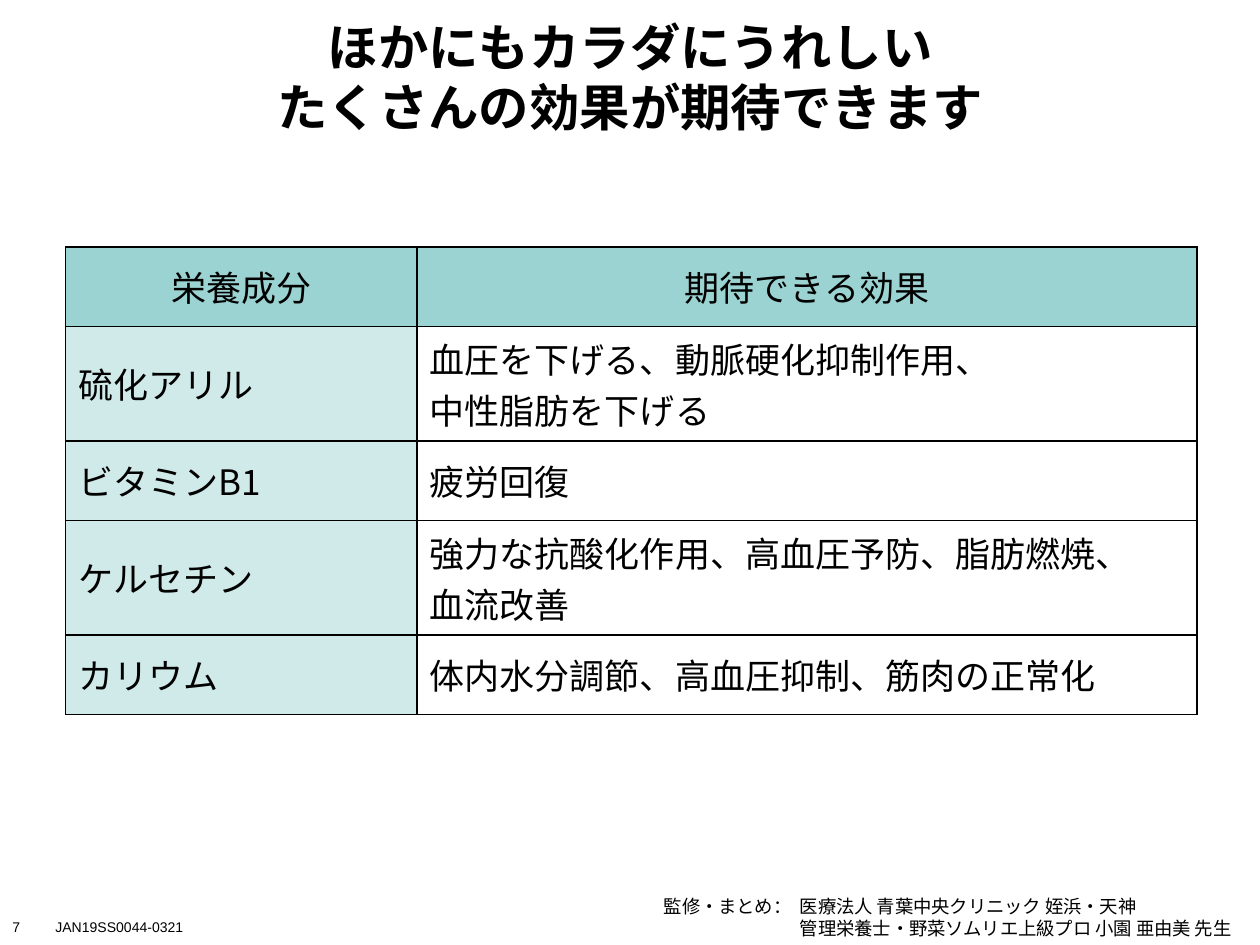
from lxml.etree import SubElement
from pptx import Presentation
from pptx.dml.color import RGBColor
from pptx.enum.text import MSO_ANCHOR as Anchor, MSO_AUTO_SIZE as AutoSize, PP_ALIGN as Align
from pptx.oxml.ns import qn
from pptx.util import Inches, Pt

COLORS = {"ink": "000000", "header": "9BD2D2", "label": "CFEAE9"}
JAPANESE = "Noto Sans CJK JP"
COLUMN_WIDTHS = (2.79, 6.19)
ONE_LINE, TWO_LINES = 0.63, 0.91
EFFECTS = (
    ("栄養成分", "期待できる効果"),
    ("硫化アリル", "血圧を下げる、動脈硬化抑制作用、\n中性脂肪を下げる"),
    ("ビタミンB1", "疲労回復"),
    ("ケルセチン", "強力な抗酸化作用、高血圧予防、脂肪燃焼、\n血流改善"),
    ("カリウム", "体内水分調節、高血圧抑制、筋肉の正常化"),
)
CREDITS = (
    "監修・まとめ：\t医療法人 青葉中央クリニック 姪浜・天神",
    "\t管理栄養士・野菜ソムリエ上級プロ 小園 亜由美 先生",
)


def color(name):
    return RGBColor.from_string(COLORS[name])


def write(para, text, size, face=JAPANESE, bold=False):
    """Add the text run by run, with a line break between its lines."""
    for index, line in enumerate(text.split("\n")):
        if index:
            para.add_line_break()
        span = para.add_run()
        span.text = line
        font = span.font
        font.name, font.size, font.bold = face, Pt(size), bold
        font.color.rgb = color("ink")
        SubElement(font._element, qn("a:ea"), typeface=face)


def place(shape, left, top, width, height):
    shape.left, shape.top = Inches(left), Inches(top)
    shape.width, shape.height = Inches(width), Inches(height)


def add_title(page, text):
    title = page.shapes.title
    place(title, 0.97, 0.02, 8.06, 1.07)
    frame = title.text_frame
    frame.auto_size = AutoSize.NONE
    frame.vertical_anchor = Anchor.MIDDLE
    frame.margin_top, frame.margin_bottom = Inches(0.14), Inches(0.04)
    para = frame.paragraphs[0]
    para.alignment = Align.CENTER
    write(para, text, 28.8, bold=True)


def add_small_text(page, text, left, width):
    box = page.shapes.add_textbox(Inches(left), Inches(7.24), Inches(width), Inches(0.24))
    box.text_frame.word_wrap = True
    write(box.text_frame.paragraphs[0], text, 8, "Arial")


def add_borders(cell):
    properties = cell._tc.get_or_add_tcPr()
    for side in ("lnL", "lnR", "lnT", "lnB"):
        line = SubElement(properties, qn(f"a:{side}"), w=str(Pt(1)))
        fill = SubElement(line, qn("a:solidFill"))
        SubElement(fill, qn("a:srgbClr"), val=COLORS["ink"])


def fill_cell(cell, name):
    if name:
        cell.fill.solid()
        cell.fill.fore_color.rgb = color(name)
    else:
        cell.fill.background()


def add_effects_table(page):
    heights = [TWO_LINES if "\n" in effect else ONE_LINE for _, effect in EFFECTS]
    frame = page.shapes.add_table(
        len(EFFECTS), len(COLUMN_WIDTHS), Inches(0.52), Inches(1.96),
        Inches(sum(COLUMN_WIDTHS)), Inches(sum(heights)))
    table = frame.table
    for column, width in zip(table.columns, COLUMN_WIDTHS):
        column.width = Inches(width)
    for row, height in zip(table.rows, heights):
        row.height = Inches(height)
    for r, texts in enumerate(EFFECTS):
        for c, text in enumerate(texts):
            cell = table.cell(r, c)
            cell.vertical_anchor = Anchor.MIDDLE
            add_borders(cell)
            fill_cell(cell, "header" if r == 0 else "label" if c == 0 else None)
            para = cell.text_frame.paragraphs[0]
            para.alignment = Align.CENTER if r == 0 else Align.LEFT
            write(para, text, 20)


def add_credits(page):
    box = page.shapes.add_textbox(Inches(5.17), Inches(7.05), Inches(4.83), Inches(0.45))
    frame = box.text_frame
    frame.word_wrap = True
    frame.vertical_anchor = Anchor.BOTTOM
    for index, text in enumerate(CREDITS):
        para = frame.add_paragraph() if index else frame.paragraphs[0]
        properties = para._p.get_or_add_pPr()
        properties.set("marL", str(Inches(1.08)))
        properties.set("indent", str(-Inches(1.08)))
        write(para, text, 10.5)


def main():
    deck = Presentation()
    deck.slide_width, deck.slide_height = Inches(10), Inches(7.5)
    page = deck.slides.add_slide(deck.slide_layouts[5])
    add_small_text(page, "JAN19SS0044-0321", 0.34, 1.28)
    add_small_text(page, "7", 0, 0.34)
    add_title(page, "ほかにもカラダにうれしい\nたくさんの効果が期待できます")
    add_effects_table(page)
    add_credits(page)
    deck.save("out.pptx")


if __name__ == "__main__":
    main()
